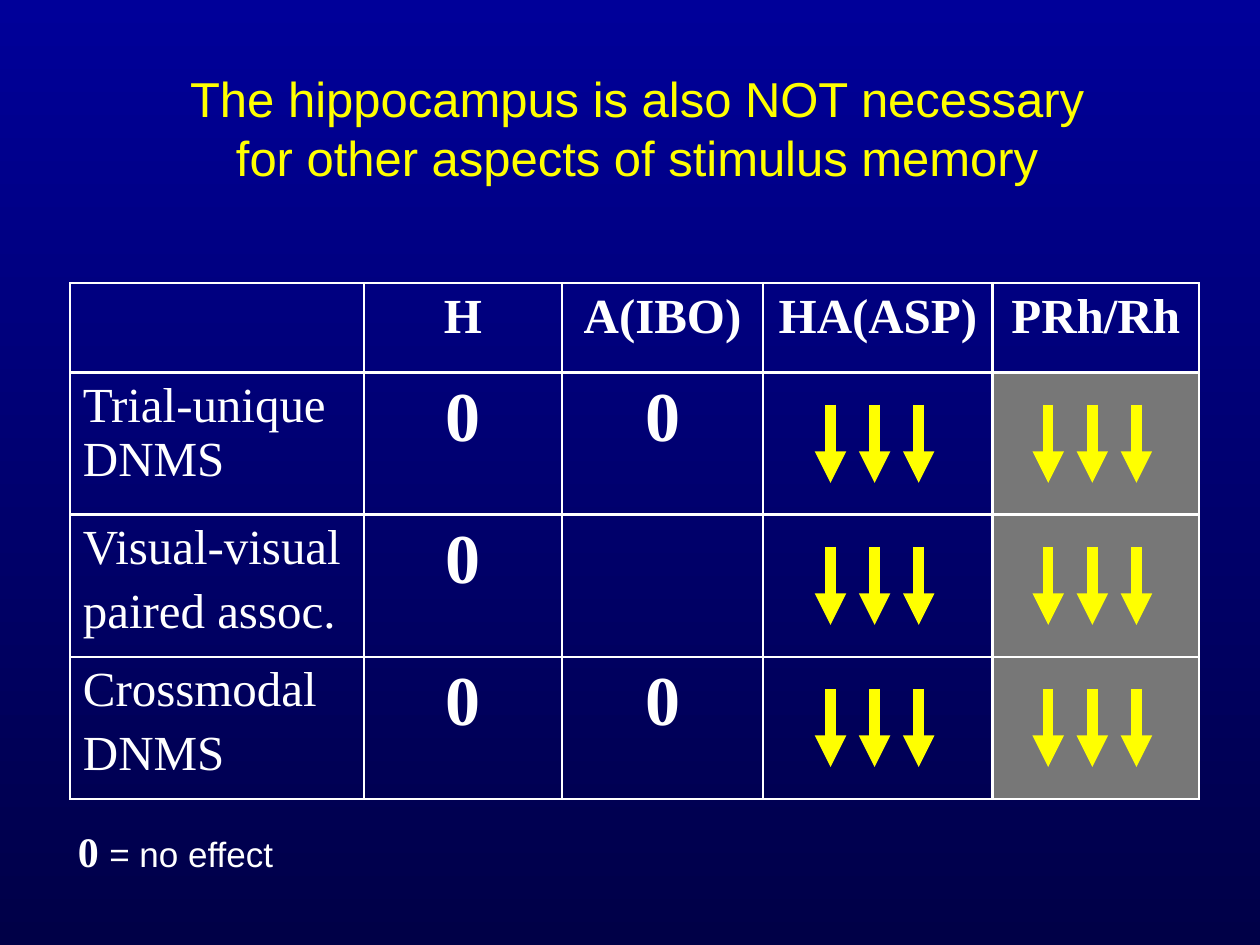
from lxml.etree import SubElement
from pptx import Presentation
from pptx.dml.color import RGBColor
from pptx.enum.shapes import MSO_CONNECTOR as Line, MSO_SHAPE as Shape
from pptx.enum.text import MSO_ANCHOR as Anchor, PP_ALIGN as Align
from pptx.oxml import parse_xml
from pptx.oxml.ns import nsdecls, qn
from pptx.util import Pt

COLORS = {
    "top": "000099", "bottom": "000047", "title": "FFFF00", "text": "FFFFFF",
    "panel": "777777", "outline": "000000", "arrow": "FFFF00", "grid": "FFFFFF",
}
SANS, SERIF = "Arial", "Times New Roman"


def color(name):
    return RGBColor.from_string(COLORS[name])


class SlideBuilder:
    """Holds the style and the current slide; all lengths are in points."""

    def __init__(self, prs):
        self.slide = prs.slides.add_slide(prs.slide_layouts[6])
        self.shapes = self.slide.shapes

    def background(self):
        fill = self.slide.background.fill
        fill.gradient()
        fill.gradient_angle = 270
        for stop, name, position in zip(fill.gradient_stops, ("top", "bottom"), (0, 1)):
            stop.color.rgb = color(name)
            stop.position = position

    def style(self, run, size, font, ink="text", bold=False):
        run.font.size, run.font.name, run.font.bold = Pt(size), font, bold
        run.font.color.rgb = color(ink)

    def panel(self, *box):
        panel = self.shapes.add_shape(Shape.RECTANGLE, *map(Pt, box))
        panel.shadow.inherit = False
        panel.fill.solid()
        panel.fill.fore_color.rgb = color("panel")
        panel.line.color.rgb = color("outline")
        panel.line.width = Pt(0.75)

    def text(self, box, runs, align=Align.LEFT, anchor=Anchor.TOP, wrap=True, margin=7.2):
        frame = self.shapes.add_textbox(*map(Pt, box)).text_frame
        frame.word_wrap, frame.vertical_anchor = wrap, anchor
        frame.margin_left = frame.margin_right = Pt(margin)
        paragraph = frame.paragraphs[0]
        paragraph.alignment = align
        for words, *look in runs:
            run = paragraph.add_run()
            run.text = words
            self.style(run, *look)

    def cell(self, cell, words, size, bold, align):
        cell.fill.background()
        for index, side in enumerate(("lnL", "lnR", "lnT", "lnB")):
            cell._tc.get_or_add_tcPr().insert(index, parse_xml(
                f'<a:{side} {nsdecls("a")} w="{Pt(1.5)}"><a:solidFill>'
                f'<a:srgbClr val="{COLORS["grid"]}"/></a:solidFill></a:{side}>'))
        cell.text_frame.text = words
        for index, paragraph in enumerate(cell.text_frame.paragraphs):
            paragraph.alignment = align
            if index:
                paragraph.space_before = Pt(5.6)
            for run in paragraph.runs:
                self.style(run, size, SERIF, bold=bold)

    def table(self, left, top, widths, heights, rows):
        table = self.shapes.add_table(
            len(heights), len(widths), Pt(left), Pt(top),
            Pt(sum(widths)), Pt(sum(heights))).table
        table.first_row = table.horz_banding = False
        for column, width in zip(table.columns, widths):
            column.width = Pt(width)
        for r, (height, row) in enumerate(zip(heights, rows)):
            table.rows[r].height = Pt(height)
            for c, words in enumerate(row):
                size = 40 if r and c else 28
                align = Align.CENTER if c else Align.LEFT
                self.cell(table.cell(r, c), words, size, not (r and c == 0), align)

    def arrows(self, center, top, count=3, gap=25.2, length=44.6):
        group = self.shapes.add_group_shape()
        for i in range(count):
            x = Pt(center + (i - (count - 1) / 2) * gap)
            arrow = group.shapes.add_connector(
                Line.STRAIGHT, x, Pt(top), x, Pt(top + length))
            arrow.line.color.rgb = color("arrow")
            arrow.line.width = Pt(6)
            SubElement(arrow.line._get_or_add_ln(), qn("a:tailEnd"), type="triangle")
            SubElement(arrow._element.spPr, qn("a:effectLst"))


def main():
    prs = Presentation()
    prs.slide_width, prs.slide_height = Pt(720), Pt(540)
    page = SlideBuilder(prs)
    page.background()

    # Grey panel behind the last column
    left, top = 40.2, 161.9
    widths, heights = (168, 112.8, 115.2, 131, 118), (51, 81.2, 81.2, 81.2)
    page.panel(left + sum(widths[:4]), top + heights[0], widths[4], sum(heights[1:]))

    # Title
    title = "The hippocampus is also NOT necessary for other aspects of stimulus memory"
    page.text((82, 34, 564, 78), [(title, 28, SANS, "title")],
              Align.CENTER, Anchor.MIDDLE, margin=14)

    # Lesion effects by task
    page.table(left, top, widths, heights, [
        ("", "H", "A(IBO)", "HA(ASP)", "PRh/Rh"),
        ("Trial-unique DNMS", "0", "0", "", ""),
        ("Visual-visual\npaired assoc.", "0", "", "", ""),
        ("Crossmodal\nDNMS", "0", "0", "", ""),
    ])

    # Impairment arrows in the last two columns
    for center in (499.8, 624.2):
        for row in range(3):
            page.arrows(center, 231.3 + row * heights[1])

    # Legend
    page.text((37.4, 468, 127.4, 36),
              [("0 ", 24, SERIF, "text", True), ("= no effect", 20, SANS)], wrap=False)

    prs.save("out.pptx")


if __name__ == "__main__":
    main()
